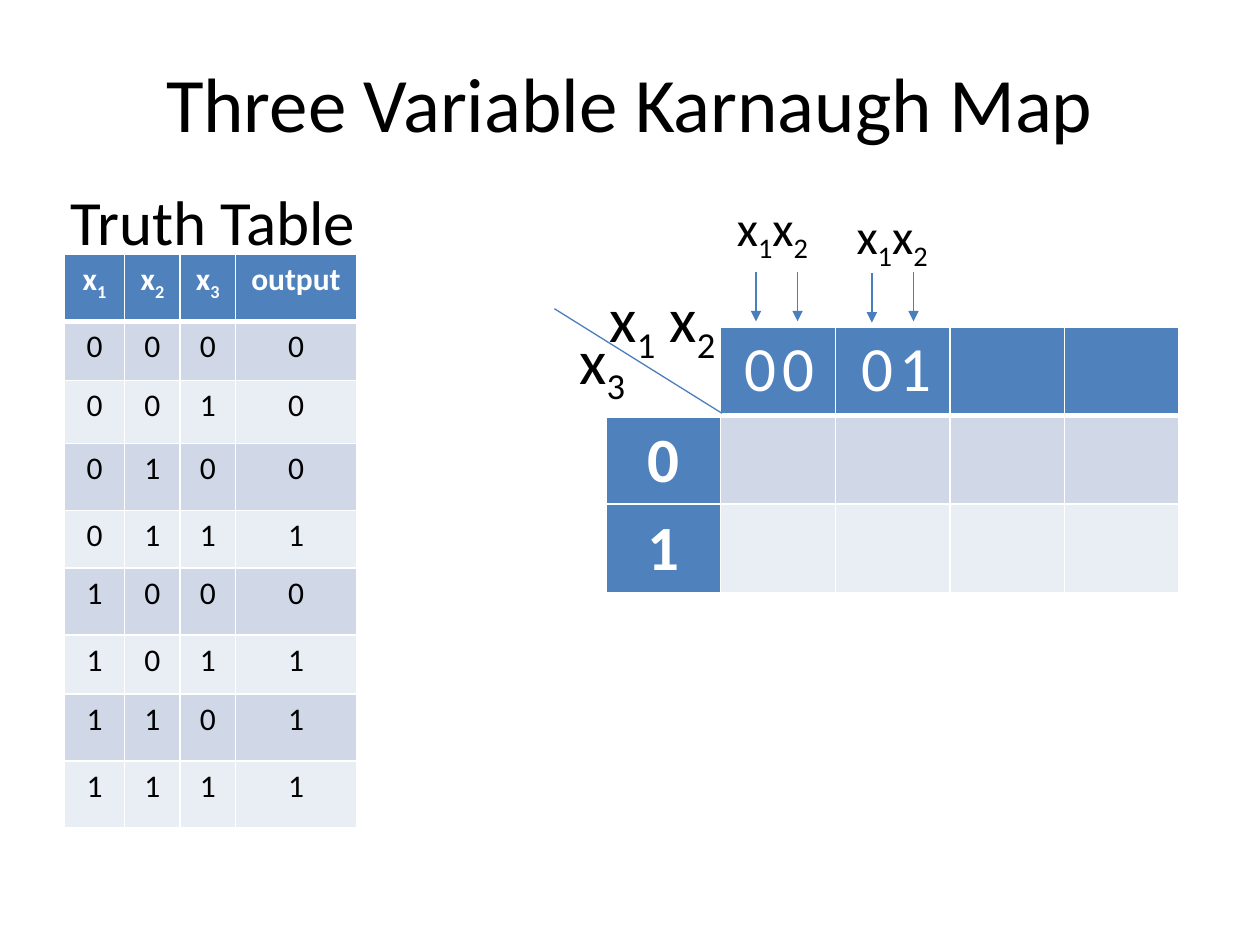
"""Build a slide with a truth table and a three variable Karnaugh map."""
from itertools import product

from lxml.etree import SubElement
from pptx import Presentation
from pptx.dml.color import RGBColor
from pptx.enum.shapes import MSO_CONNECTOR
from pptx.enum.text import MSO_ANCHOR, PP_ALIGN
from pptx.oxml.ns import qn
from pptx.util import Inches, Pt

HUES = {
    "black": "000000",
    "white": "FFFFFF",
    "head": "4F81BD",
    "dark": "D0D8E8",
    "light": "E9EDF4",
    "line": "4B7EBC",
}


def write(frame, parts, size, hue="black", bold=False, align=PP_ALIGN.CENTER):
    """Fill a frame with runs; a part that starts with _ is a subscript."""
    para = frame.paragraphs[0]
    para.alignment = align
    for part in parts:
        run = para.add_run()
        run.text = part.lstrip("_")
        run.font.size = Pt(size)
        run.font.name = "Calibri"
        run.font.bold = bold
        run.font.color.rgb = RGBColor.from_string(HUES[hue])
        if part.startswith("_"):
            run._r.get_or_add_rPr().set("baseline", "-25000")


def paint(cell, hue, row):
    """Give a cell white borders, thick under the header, and a fill."""
    props = cell._tc.get_or_add_tcPr()
    thick = {("lnB", 0), ("lnT", 1)}
    for side in ("lnL", "lnR", "lnT", "lnB"):
        width = 3 if (side, row) in thick else 1
        edge = SubElement(props, qn(f"a:{side}"), w=str(Pt(width)))
        fill = SubElement(edge, qn("a:solidFill"))
        SubElement(fill, qn("a:srgbClr"), val=HUES["white"])
    cell.fill.solid()
    cell.fill.fore_color.rgb = RGBColor.from_string(HUES[hue])


deck = Presentation()
deck.slide_width = Inches(10)
deck.slide_height = Inches(7.5)
slide = deck.slides.add_slide(deck.slide_layouts[6])
shapes = slide.shapes

title = shapes.add_textbox(Inches(0.5), Inches(0.3), Inches(9), Inches(1.02))
title.text_frame.word_wrap = True
title.text_frame.vertical_anchor = MSO_ANCHOR.MIDDLE
write(title.text_frame, ["Three Variable Karnaugh Map"], 44)

heads = [["x", "_1"], ["x", "_2"], ["x", "_3"], ["output"]]
outs = "00010111"
bits = [[*trio, out] for trio, out in zip(product("01", repeat=3), outs)]
widths = [0.48, 0.44, 0.44, 0.96]
heights = [0.53, 0.47, 0.5, 0.53, 0.46, 0.53, 0.47, 0.53, 0.53]
truth = shapes.add_table(
    9, 4, Inches(0.51), Inches(2.02), Inches(2.32), Inches(4.55)
).table
for col, width in zip(truth.columns, widths):
    col.width = Inches(width)
for row, height in enumerate(heights):
    truth.rows[row].height = Inches(height)
    for col, parts in enumerate([heads, *bits][row]):
        cell = truth.cell(row, col)
        top = row == 0
        paint(cell, "head" if top else ("light", "dark")[row % 2], row)
        write(cell.text_frame, parts, 18, "white" if top else "black", top)

kmap = shapes.add_table(
    3, 5, Inches(4.81), Inches(2.6), Inches(4.55), Inches(2.1)
).table
for col in kmap.columns:
    col.width = Inches(0.91)
for row in range(3):
    kmap.rows[row].height = Inches(0.7)
    for col in range(5):
        hue = ("light", "dark")[row % 2]
        if row == 0 or col == 0:
            hue = "head" if row or col else "white"
        cell = kmap.cell(row, col)
        paint(cell, hue, row)
        if row and not col:
            cell.vertical_anchor = MSO_ANCHOR.MIDDLE
            write(cell.text_frame, str(row - 1), 36, "white", True)

pair = ["x", "_1", "x", "_2"]
labels = [
    (0.46, 1.4, 2.52, 0.71, ["Truth Table"], 36),
    (4.74, 2.17, 1.1, 0.71, ["x", "_1", " x", "_2"], 36),
    (4.5, 2.5, 0.61, 0.71, ["x", "_3"], 36),
    (5.75, 1.52, 0.86, 0.57, pair, 28),
    (6.7, 1.58, 0.86, 0.57, pair, 28),
]
for left, top, width, height, parts, size in labels:
    box = shapes.add_textbox(*map(Inches, (left, top, width, height)))
    box.text_frame.word_wrap = True
    write(box.text_frame, parts, size, align=PP_ALIGN.LEFT)

for left, code in ((5.73, "0 0"), (6.66, "0 1")):
    box = shapes.add_textbox(*map(Inches, (left, 2.56, 0.91, 0.71)))
    box.text_frame.word_wrap = True
    write(box.text_frame, code, 36, "white")
    box.text_frame.paragraphs[0].runs[1].font.size = Pt(14)

lines = [(5.73, 3.28, 4.4, 2.45, False)]
for left, top in ((6, 2.16), (6.33, 2.16), (6.92, 2.17), (7.25, 2.16)):
    lines.append((left, top, left, top + 0.39, True))
for *ends, arrow in lines:
    line = shapes.add_connector(MSO_CONNECTOR.STRAIGHT, *map(Inches, ends))
    line.line.width = Pt(0.75)
    line.line.color.rgb = RGBColor.from_string(HUES["line"])
    if arrow:
        SubElement(line.line._get_or_add_ln(), qn("a:tailEnd"), type="triangle")
    SubElement(line._element.spPr, qn("a:effectLst"))

deck.save("out.pptx")
